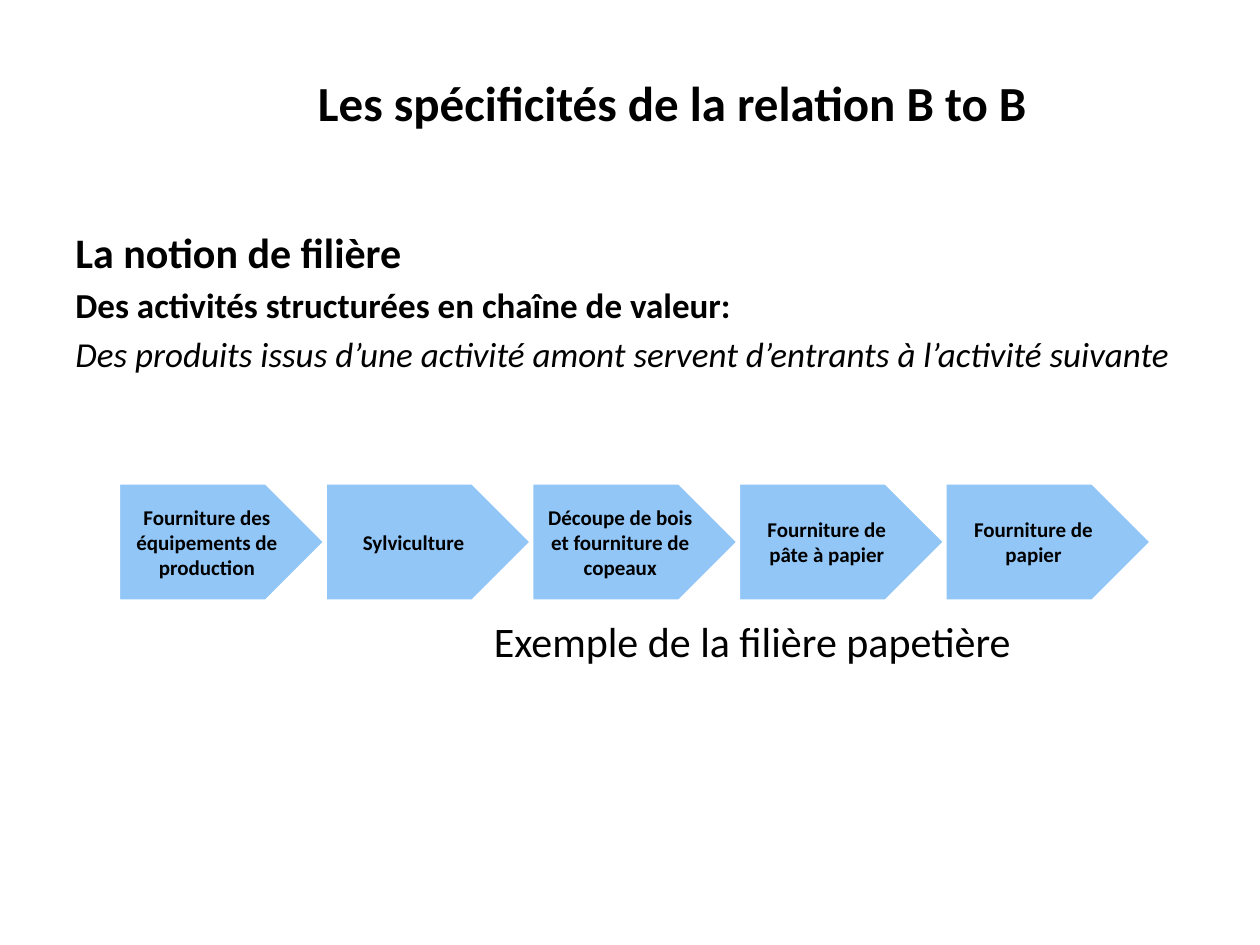
from dataclasses import dataclass

from pptx import Presentation
from pptx.dml.color import RGBColor
from pptx.enum.shapes import MSO_SHAPE
from pptx.enum.text import MSO_ANCHOR, PP_ALIGN
from pptx.util import Inches, Pt

W, H = 10, 7.5
STEP_LEFT, STEP_TOP, STEP_W, STEP_H = 0.094, 0.511, 0.164, 0.125


@dataclass
class Line:
    text: str
    size: int
    bold: bool = False
    italic: bool = False
    align: PP_ALIGN = PP_ALIGN.LEFT
    before: int = 0
    hang: float = 0


@dataclass
class Box:
    x: float
    y: float
    w: float
    h: float

    def emu(self) -> tuple:
        return (Inches(self.x * W), Inches(self.y * H),
                Inches(self.w * W), Inches(self.h * H))


def rgb(value: str) -> RGBColor:
    return RGBColor.from_string(value)


def write(sp, lines: list[Line], anchor=MSO_ANCHOR.TOP) -> None:
    tf = sp.text_frame
    tf.word_wrap, tf.vertical_anchor = True, anchor
    for i, line in enumerate(lines):
        p = tf.add_paragraph() if i else tf.paragraphs[0]
        p.alignment, p.space_before = line.align, Pt(line.before)
        if line.hang:
            pPr = p._p.get_or_add_pPr()
            pPr.set("marL", str(Inches(line.hang)))
            pPr.set("indent", str(-Inches(line.hang)))
        r = p.add_run()
        r.text = line.text
        fmt = {"name": "Calibri", "size": Pt(line.size),
               "bold": line.bold, "italic": line.italic}
        for key, value in fmt.items():
            setattr(r.font, key, value)
        r.font.color.rgb = rgb("000000")


def add_text(s, box: Box, lines: list[Line], anchor=MSO_ANCHOR.TOP):
    sp = s.shapes.add_textbox(*box.emu())
    write(sp, lines, anchor)
    return sp


def add_step(s, col: int, text: str) -> None:
    box = Box(STEP_LEFT + col * STEP_W, STEP_TOP, STEP_W, STEP_H)
    sp = s.shapes.add_shape(MSO_SHAPE.PENTAGON, *box.emu())
    sp.shadow.inherit = False
    sp.fill.solid()
    sp.fill.fore_color.rgb = rgb("91C6F7")
    sp.line.color.rgb = rgb("FFFFFF")
    sp.line.width = Pt(2)
    write(sp, [Line(text, 12, bold=True, align=PP_ALIGN.CENTER)], MSO_ANCHOR.MIDDLE)


def main() -> None:
    prs = Presentation()
    prs.slide_width, prs.slide_height = Inches(W), Inches(H)
    s = prs.slides.add_slide(prs.slide_layouts[6])

    add_text(s, Box(0.05, 0.233, 0.9, 0.66), [
        Line("La notion de filière", 24, bold=True),
        Line("Des activités structurées en chaîne de valeur:", 20, bold=True, before=4),
        Line("Des produits issus d’une activité amont servent d’entrants à l’activité suivante",
             20, italic=True, before=4, hang=0.38),
    ])

    steps = ["Fourniture des équipements de production", "Sylviculture",
             "Découpe de bois et fourniture de copeaux",
             "Fourniture de pâte à papier", "Fourniture de papier"]
    for col, text in enumerate(steps):
        add_step(s, col, text)

    caption = add_text(s, Box(0.258, 0.645, 0.578, 0.067), [
        Line("Exemple de la filière papetière", 24, align=PP_ALIGN.CENTER)])
    caption.text_frame.margin_left = Inches(1.1)

    add_text(s, Box(0.117, 0.033, 0.833, 0.15), [
        Line("Les spécificités de la relation B to B", 28, bold=True,
             align=PP_ALIGN.CENTER)], MSO_ANCHOR.MIDDLE)

    prs.save("out.pptx")


if __name__ == "__main__":
    main()
